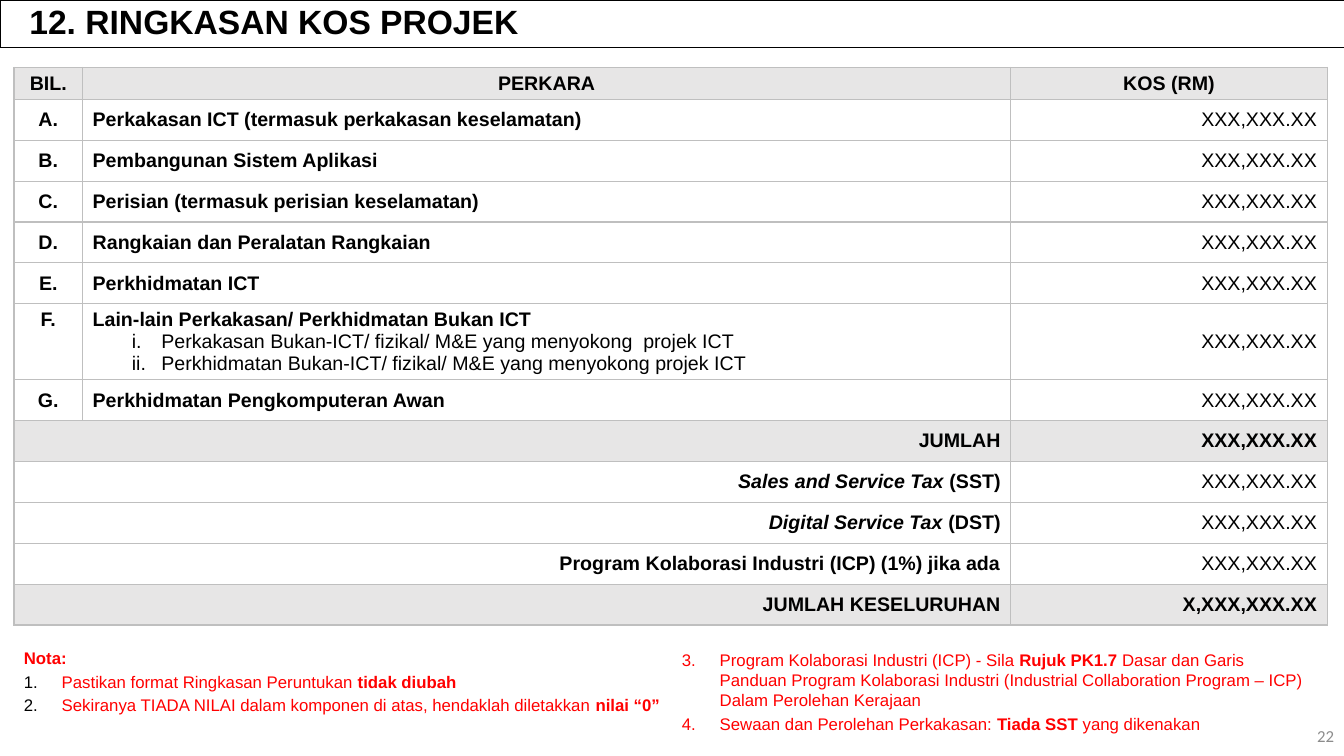
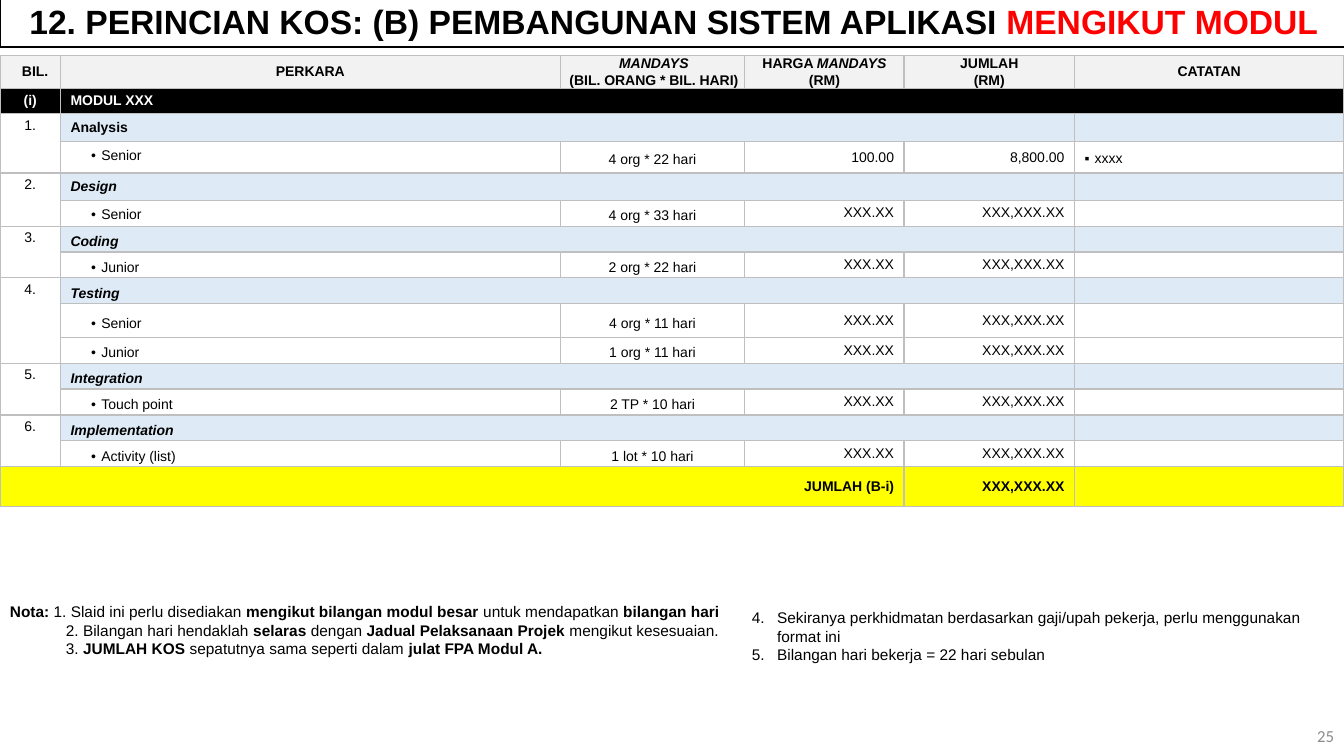
"""Build two project cost slides: the summary and the module breakdown."""
from lxml import etree
from pptx import Presentation
from pptx import util as u
from pptx.dml import color
from pptx.enum import text
from pptx.oxml import ns

Pt = u.Pt
BLACK, WHITE, RED, NUMBER_GREY = "000000", "FFFFFF", "FF0000", "8C8C8C"
BORDER, SUMMARY_GREY, HEADER_GREY = "BFBFBF", "E7E6E6", "F2F2F2"
BAND_BLUE, TOTAL_YELLOW = "DEEBF7", "FFFF00"
LEFT, CENTER, RIGHT = text.PP_ALIGN.LEFT, text.PP_ALIGN.CENTER, text.PP_ALIGN.RIGHT
TOP, MIDDLE = text.MSO_ANCHOR.TOP, text.MSO_ANCHOR.MIDDLE
PAD, DEEP, TIGHT, FLUSH = (7.2, 3), (7.2, 3.6), (0.7, 0.5), (0, 0)
ROW_LINE, HEADER_LINE, ITEM_LINE = Pt(15.1), Pt(11.5), Pt(15.7)

ITEMS = [
    ("A.", "Perkakasan ICT (termasuk perkakasan keselamatan)"),
    ("B.", "Pembangunan Sistem Aplikasi"),
    ("C.", "Perisian (termasuk perisian keselamatan)"),
    ("D.", "Rangkaian dan Peralatan Rangkaian"),
    ("E.", "Perkhidmatan ICT"),
    ("F.", "Lain-lain Perkakasan/ Perkhidmatan Bukan ICT "),
    ("G.", "Perkhidmatan Pengkomputeran Awan"),
]
OTHER_ITEMS = [
    "Perkakasan Bukan-ICT/ fizikal/ M&E yang menyokong  projek ICT",
    "Perkhidmatan Bukan-ICT/ fizikal/ M&E yang menyokong projek ICT",
]
TOTALS = [
    ("JUMLAH", "XXX,XXX.XX", True),
    ([("Sales and Service Tax ", "i"), "(SST)"], "XXX,XXX.XX", False),
    ([("Digital Service Tax ", "i"), "(DST)"], "XXX,XXX.XX", False),
    ("Program Kolaborasi Industri (ICP) (1%) jika ada", "XXX,XXX.XX", False),
    ("JUMLAH KESELURUHAN", "X,XXX,XXX.XX", True),
]
MODULE_HEADERS = [
    ["BIL."],
    ["PERKARA"],
    [[("MANDAYS", "i")], "(BIL. ORANG * BIL. HARI)"],
    [["HARGA ", ("MANDAYS", "i")], "(RM)"],
    ["JUMLAH", "(RM)"],
    ["CATATAN"],
]
UNKNOWN = ("XXX.XX", "XXX,XXX.XX")
PHASES = [
    ("Analysis", [("Senior", "4 org * 22 hari", "100.00", "8,800.00")]),
    ("Design", [("Senior", "4 org * 33 hari", *UNKNOWN)]),
    ("Coding", [("Junior", "2 org * 22 hari", *UNKNOWN)]),
    ("Testing", [("Senior", "4 org * 11 hari", *UNKNOWN),
                 ("Junior", "1 org * 11 hari", *UNKNOWN)]),
    ("Integration", [("Touch point", "2 TP * 10 hari", *UNKNOWN)]),
    ("Implementation", [("Activity (list)", "1 lot * 10 hari", *UNKNOWN)]),
]


def rgb(hex_code):
    """Turn a hex string into a colour."""
    return color.RGBColor.from_string(hex_code)


def add_xml(parent, tag, **attributes):
    """Append a drawing element and return it."""
    return etree.SubElement(parent, ns.qn(tag), attributes)


def set_bullet(para, bullet, bullet_color, start):
    """Give a paragraph a numbering scheme or a bullet character."""
    properties = para._p.get_or_add_pPr()
    add_xml(add_xml(properties, "a:buClr"), "a:srgbClr", val=bullet_color)
    if len(bullet) == 1:
        add_xml(properties, "a:buFont", typeface="Arial")
        add_xml(properties, "a:buChar", char=bullet)
    else:
        add_xml(properties, "a:buAutoNum", type=bullet, startAt=str(start))


def write(frame, line, size, bold=False, italic=False, ink=BLACK, align=LEFT, spacing=None,
          before=0, indent=(0, 0), bullet=None, bullet_color=None, start=1, font="Arial"):
    """Add one paragraph made of plain spans and (text, flags) spans."""
    para = frame.paragraphs[-1]
    if para.runs:
        para = frame.add_paragraph()
    para.alignment = align
    para.space_before = Pt(before)
    if spacing:
        para.line_spacing = spacing
    properties = para._p.get_or_add_pPr()
    properties.set("marL", str(Pt(indent[0])))
    properties.set("indent", str(Pt(indent[1])))
    if bullet:
        set_bullet(para, bullet, bullet_color or ink, start)
    para.font.name, para.font.size = font, Pt(size)
    para.font.bold, para.font.italic = bold, italic
    para.font.color.rgb = rgb(ink)
    for item in [line] if isinstance(line, str) else line:
        words, flags = (item, "") if isinstance(item, str) else item
        span = para.add_run()
        span.text = words
        if "b" in flags:
            span.font.bold = True
        if "i" in flags:
            span.font.italic = True
        if "r" in flags:
            span.font.color.rgb = rgb(RED)


def add_page(deck, title, number, top=0):
    """Add a slide with the framed title and the page number."""
    page = deck.slides.add_slide(deck.slide_layouts[5])
    box = page.shapes.title
    box.left, box.top, box.width, box.height = Pt(0), Pt(top), Pt(961), Pt(34)
    box.line.color.rgb = rgb(BLACK)
    box.line.width = Pt(0.75)
    frame = box.text_frame
    frame.auto_size = text.MSO_AUTO_SIZE.NONE
    frame.word_wrap = True
    frame.vertical_anchor = MIDDLE
    frame.margin_left, frame.margin_right = Pt(21), Pt(0)
    write(frame, title, 24, bold=True, spacing=0.9)
    number_frame = add_box(page, 744, 511, 216, 29)
    number_frame.vertical_anchor = MIDDLE
    write(number_frame, number, 12, ink=NUMBER_GREY, align=RIGHT, font="Calibri")
    return page


def add_box(page, left, top, width, height):
    """Add a wrapping text box and return its text frame."""
    box = page.shapes.add_textbox(Pt(left), Pt(top), Pt(width), Pt(height))
    box.text_frame.word_wrap = True
    return box.text_frame


def add_grid(page, left, top, widths, heights, size):
    """Add a white table with grey cell borders."""
    table = page.shapes.add_table(len(heights), len(widths), Pt(left), Pt(top),
                                  Pt(sum(widths)), Pt(sum(heights))).table
    table.first_row = table.horz_banding = False
    for column, width in zip(table.columns, widths):
        column.width = Pt(width)
    for row, height in zip(table.rows, heights):
        row.height = Pt(height)
    for cell in table.iter_cells():
        properties = cell._tc.get_or_add_tcPr()
        for side in "LRTB":
            edge = add_xml(properties, f"a:ln{side}", w=str(Pt(1)))
            add_xml(add_xml(edge, "a:solidFill"), "a:srgbClr", val=BORDER)
        add_xml(cell.text_frame.paragraphs[0]._p, "a:endParaRPr", sz=str(size * 100))
        style_cell(cell)
    return table


def open_edge(table, row, first, last):
    """Hide the vertical borders between neighbouring cells of a row."""
    for column in range(first, last):
        for cell, side in ((table.cell(row, column), "R"), (table.cell(row, column + 1), "L")):
            edge = cell._tc.get_or_add_tcPr().find(ns.qn(f"a:ln{side}"))
            edge.remove(edge[0])
            add_xml(edge, "a:noFill")


def style_cell(cell, fill=WHITE, anchor=MIDDLE, pad=PAD):
    """Set the fill, anchor and margins of a cell."""
    cell.fill.solid()
    cell.fill.fore_color.rgb = rgb(fill)
    cell.vertical_anchor = anchor
    cell.margin_left = cell.margin_right = Pt(pad[0])
    cell.margin_top = cell.margin_bottom = Pt(pad[1])


def fill_cell(cell, lines, size, fill=WHITE, anchor=MIDDLE, pad=PAD, **style):
    """Style a cell and write its lines."""
    style_cell(cell, fill, anchor, pad)
    for line in lines:
        write(cell.text_frame, line, size, **style)


def add_summary_table(page):
    """Add the table of cost items and totals."""
    heights = [22.5] + [54.3 if mark == "F." else 29.2 for mark, _ in ITEMS] + [29.2] * len(TOTALS)
    table = add_grid(page, 10, 48.2, [49, 663, 226], heights, 14)
    for column, label in enumerate(["BIL.", "PERKARA", "KOS (RM)"]):
        fill_cell(table.cell(0, column), [label], 14, SUMMARY_GREY, bold=True, align=CENTER)
    for row, (mark, label) in enumerate(ITEMS, 1):
        anchor, spacing = (TOP, ITEM_LINE) if mark == "F." else (MIDDLE, None)
        fill_cell(table.cell(row, 0), [mark], 14, anchor=anchor, pad=DEEP, bold=True,
                  align=CENTER)
        fill_cell(table.cell(row, 1), [label], 14, bold=True, spacing=spacing)
        fill_cell(table.cell(row, 2), ["XXX,XXX.XX"], 14, align=RIGHT)
        if mark == "F.":
            for item in OTHER_ITEMS:
                write(table.cell(row, 1).text_frame, item, 14, indent=(49, -21),
                      bullet="romanLcPeriod", spacing=spacing)
    for row, (label, amount, strong) in enumerate(TOTALS, len(ITEMS) + 1):
        fill = SUMMARY_GREY if strong else WHITE
        open_edge(table, row, 0, 1)
        style_cell(table.cell(row, 0), fill)
        fill_cell(table.cell(row, 1), [label], 14, fill, bold=True, align=RIGHT)
        fill_cell(table.cell(row, 2), [amount], 14, fill, bold=strong, align=RIGHT)


def add_phase(table, row, number, name, roles):
    """Write one phase band with its role rows and return the next free row."""
    anchor = TOP if number < 3 else MIDDLE
    table.cell(row, 0).merge(table.cell(row + len(roles), 0))
    fill_cell(table.cell(row, 0), [f"{number}."], 10, anchor=TOP, align=CENTER)
    open_edge(table, row, 1, 4)
    for column in range(2, 6):
        style_cell(table.cell(row, column), BAND_BLUE)
    fill_cell(table.cell(row, 1), [name], 10, BAND_BLUE, anchor, TIGHT, bold=True,
              italic=number > 1, indent=(6.5, 0), spacing=ROW_LINE)
    for line, (role, days, rate, amount) in enumerate(roles, row + 1):
        fill_cell(table.cell(line, 1), [role], 10, anchor=anchor, pad=TIGHT,
                  indent=(28.5, -7.2), bullet="•", spacing=ROW_LINE)
        fill_cell(table.cell(line, 2), [days], 10, pad=TIGHT, align=CENTER, spacing=ROW_LINE)
        fill_cell(table.cell(line, 3), [rate], 10, align=RIGHT)
        fill_cell(table.cell(line, 4), [amount], 10, align=RIGHT)
    return row + len(roles) + 1


def add_module_table(page):
    """Add the table of phases, mandays and prices for one module."""
    heights = [23.5, 17.5, 20, 22.5, 19.5] + [18.5] * 4 + [24] + [18.5] * 5 + [28.5]
    table = add_grid(page, 0, 39.6, [43.2, 356.9, 131.9, 113.8, 121.7, 192.5], heights, 10)
    for column, lines in enumerate(MODULE_HEADERS):
        fill_cell(table.cell(0, column), lines, 10, HEADER_GREY, pad=FLUSH, bold=True,
                  align=CENTER, spacing=HEADER_LINE,
                  indent=({0: 7, 2: 2}.get(column, 0), 0))
    open_edge(table, 1, 4, 5)
    table.cell(1, 1).merge(table.cell(1, 4))
    fill_cell(table.cell(1, 0), ["(i)"], 10, BLACK, bold=True, ink=WHITE, align=CENTER)
    fill_cell(table.cell(1, 1), ["MODUL XXX"], 10, BLACK, bold=True, ink=WHITE)
    style_cell(table.cell(1, 5), BLACK)
    row = 2
    for number, (name, roles) in enumerate(PHASES, 1):
        row = add_phase(table, row, number, name, roles)
    fill_cell(table.cell(3, 5), ["xxxx"], 10, anchor=TOP, indent=(7.2, -7.2), bullet="▪",
              spacing=ROW_LINE)
    table.cell(row, 0).merge(table.cell(row, 3))
    fill_cell(table.cell(row, 0), ["JUMLAH (B-i)"], 10, TOTAL_YELLOW, bold=True, align=RIGHT)
    fill_cell(table.cell(row, 4), ["XXX,XXX.XX"], 10, TOTAL_YELLOW, bold=True, align=RIGHT)
    style_cell(table.cell(row, 5), TOTAL_YELLOW)


def add_list(frame, lines, size, indent, **style):
    """Write numbered notes with a hanging indent."""
    for line in lines:
        write(frame, line, size, indent=(indent, -indent), bullet="arabicPeriod", **style)


def add_summary_notes(page):
    """Add the red notes below the summary table."""
    frame = add_box(page, 10, 459.2, 476, 65)
    write(frame, "Nota:", 12, bold=True, ink=RED)
    add_list(frame, [
        ["Pastikan format Ringkasan Peruntukan ", ("tidak diubah", "b")],
        ["Sekiranya TIADA NILAI dalam komponen di atas, hendaklah diletakkan ",
         ("nilai “0”", "b")],
    ], 12, 27, ink=RED, bullet_color=BLACK, before=2.4)
    add_list(add_box(page, 480, 460.4, 462.5, 65), [
        ["Program Kolaborasi Industri (ICP) - Sila ", ("Rujuk PK1.7 ", "b"),
         "Dasar dan Garis Panduan Program Kolaborasi Industri "
         "(Industrial Collaboration Program – ICP) Dalam Perolehan Kerajaan"],
        ["Sewaan dan Perolehan Perkakasan: ", ("Tiada SST ", "b"), "yang dikenakan"],
    ], 12, 27, ink=RED, start=3, before=2.4)


def add_module_notes(page):
    """Add the black notes below the module table."""
    frame = add_box(page, 0, 426.8, 536, 48)
    write(frame, [("Nota:", "b"), " 1. Slaid ini perlu disediakan ",
                  ("mengikut bilangan modul besar ", "b"), "untuk mendapatkan ",
                  ("bilangan hari", "b")], 11)
    for line in (
        ["2. Bilangan hari hendaklah ", ("selaras", "b"), " dengan ",
         ("Jadual Pelaksanaan Projek ", "b"), "mengikut kesesuaian."],
        ["3. ", ("JUMLAH KOS ", "b"), "sepatutnya sama seperti dalam ",
         ("julat FPA Modul A.", "b")],
    ):
        write(frame, line, 11, indent=(40, 0))
    add_list(add_box(page, 530, 431, 425.5, 48), [
        "Sekiranya perkhidmatan berdasarkan gaji/upah pekerja, perlu menggunakan format ini",
        "Bilangan hari bekerja = 22 hari sebulan",
    ], 11, 18, start=4)


def main():
    """Build and save the deck."""
    deck = Presentation()
    deck.slide_width, deck.slide_height = Pt(960), Pt(540)
    summary = add_page(deck, "12. RINGKASAN KOS PROJEK", "22")
    add_summary_table(summary)
    add_summary_notes(summary)
    module = add_page(deck, ["12. PERINCIAN KOS: (B) PEMBANGUNAN SISTEM APLIKASI ",
                             ("MENGIKUT MODUL", "r")], "25", top=-0.4)
    add_module_table(module)
    add_module_notes(module)
    deck.save("out.pptx")


if __name__ == "__main__":
    main()
